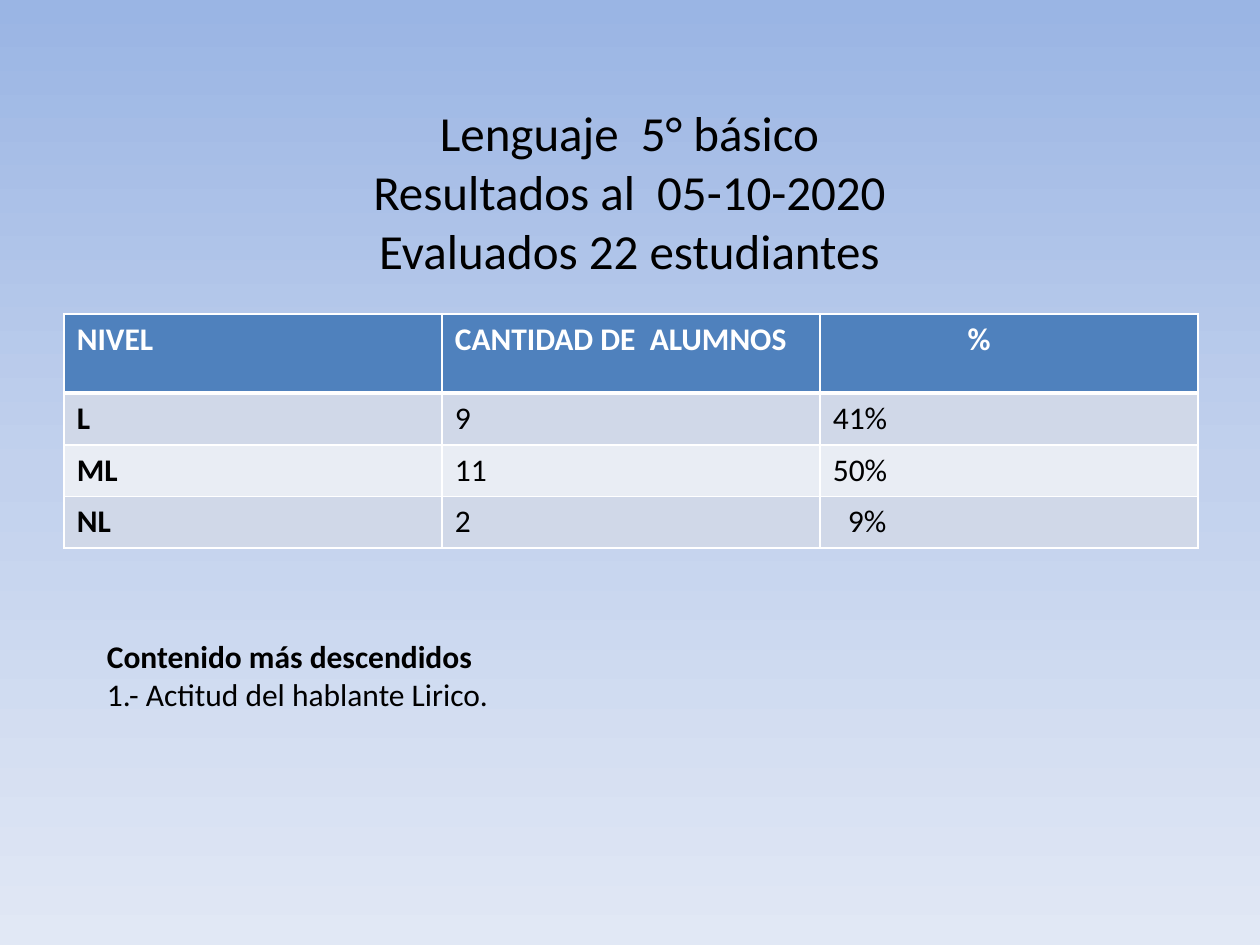
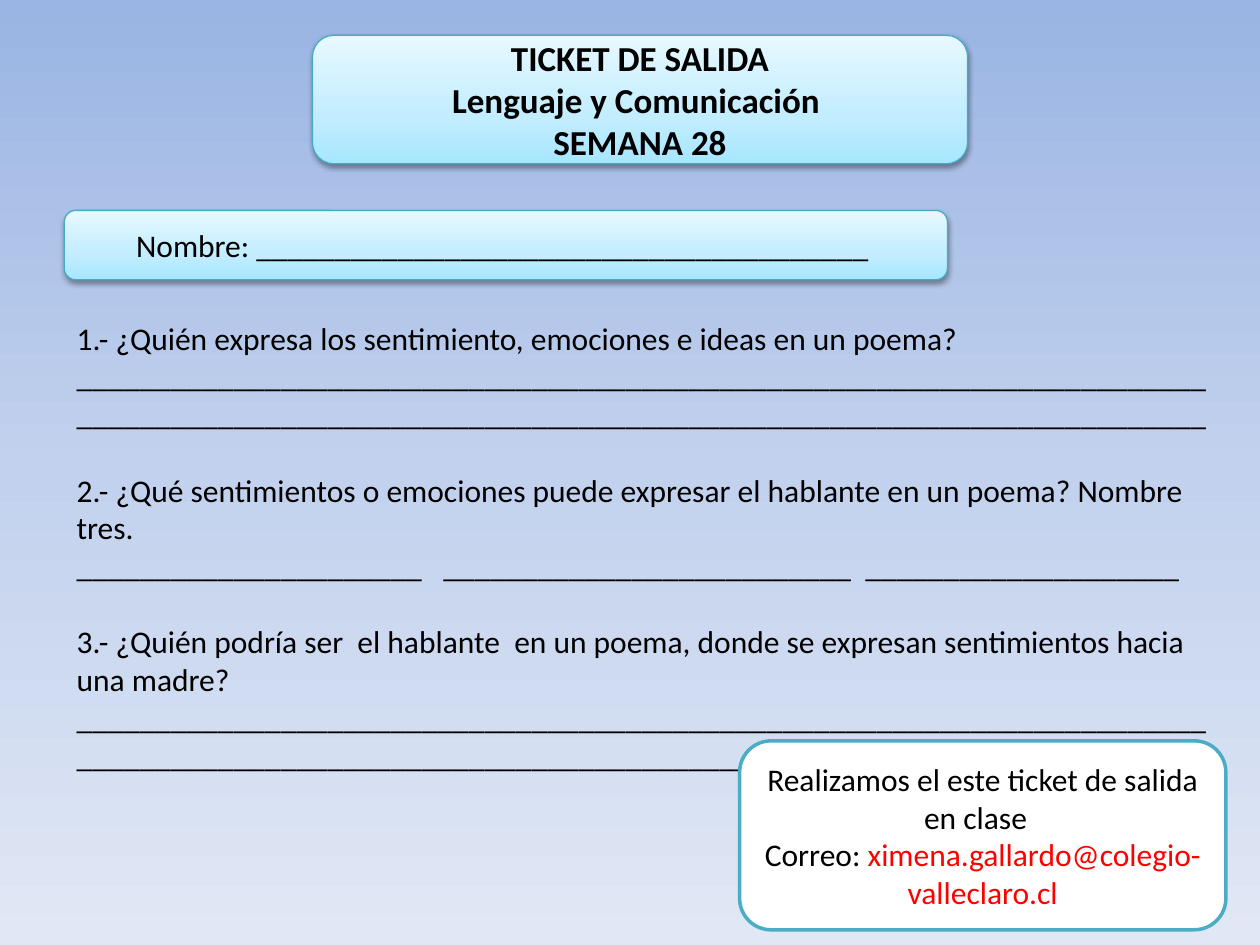
from dataclasses import dataclass

from lxml.etree import SubElement
from pptx import Presentation
from pptx.dml.color import RGBColor
from pptx.enum.shapes import MSO_SHAPE as Shape
from pptx.enum.text import MSO_ANCHOR as Anchor, MSO_AUTO_SIZE as AutoSize, PP_ALIGN as Align
from pptx.oxml.ns import qn
from pptx.util import Emu, Inches, Pt

# Content: a line is a text or a list of (text, format) pieces
RESULTS_TITLE = ["Lenguaje  5° básico", "Resultados al  05-10-2020", "Evaluados 22 estudiantes"]
RESULTS = [
    ["NIVEL", "CANTIDAD DE  ALUMNOS", "%"],
    ["L", "9", "41%"],
    ["ML", "11", "50%"],
    ["NL", "2", "9%"],
]
RESULT_INDENTS = {(0, 2): 1.07, (3, 2): 0.12}
WEAK_CONTENT = [
    [("Contenido más descendidos", {"bold": True})],
    "1.- Actitud del hablante Lirico.",
]
TICKET_TITLE = ["TICKET DE SALIDA", "Lenguaje y Comunicación ", "SEMANA 28"]
STUDENT_NAME = ["Nombre: " + "_" * 39 + " "]
QUESTIONS = [
    ("1.- ¿Quién expresa los sentimiento, emociones e ideas en un poema?", "_" * 144),
    ("2.- ¿Qué sentimientos o emociones puede expresar el hablante en un poema? Nombre tres.",
     "\t".join("_" * count for count in (22, 26, 20))),
    ("3.- ¿Quién podría ser  el hablante  en un poema, donde se expresan sentimientos hacia "
     "una madre?", "_" * 115),
]
ANSWER_TABS = [2.91, 6.26]


@dataclass(frozen=True)
class Theme:
    font: str = "Calibri"
    ink: str = "000000"
    white: str = "FFFFFF"
    header: str = "4F81BD"
    bands: tuple = ("D0D8E8", "E9EDF4")
    alert: str = "FF0000"
    card_line: str = "46AAC5"
    note_line: str = "4BACC6"
    backdrop: tuple = ((0, "9AB5E4"), (50, "C2D1ED"), (100, "E1E8F5"))
    card: tuple = ((0, "A7E6FF"), (35, "C1EDFF"), (100, "E7F8FF"))
    title: int = 28
    heading: int = 20
    body: int = 18
    gap: int = 22


THEME = Theme()
CONTACT = [
    "Realizamos el este ticket de salida en clase  ",
    ["Correo: ", ("ximena.gallardo@colegio-valleclaro.cl", {"color": THEME.alert})],
]

# Layout in inches
WIDTH, HEIGHT = 10, 7.5
MARGIN = 0.51
COLUMN = 3
HEADER_ROW, BODY_ROW = 0.63, 0.41


def rgb(code):
    return RGBColor.from_string(code)


def box(*lengths):
    return [Inches(length) for length in lengths]


def add_color(parent, code):
    return SubElement(parent, qn("a:srgbClr"), val=code)


def paint_gradient(fill, owner, stops, angle):
    fill.gradient()
    fill.gradient_angle = angle
    stop_list = owner.find(".//" + qn("a:gsLst"))
    stop_list.clear()
    for share, code in stops:
        add_color(SubElement(stop_list, qn("a:gs"), pos=str(share * 1000)), code)


def write(frame, lines, size=THEME.body, align=Align.LEFT, anchor=Anchor.TOP, **base):
    frame.word_wrap = True
    frame.vertical_anchor = anchor
    for number, line in enumerate(lines):
        paragraph = frame.paragraphs[0] if number == 0 else frame.add_paragraph()
        paragraph.alignment = align
        for piece in [line] if isinstance(line, str) else line:
            words, extra = (piece, {}) if isinstance(piece, str) else piece
            look = {"name": THEME.font, "size": Pt(size), "bold": False,
                    "color": THEME.ink, **base, **extra}
            run = paragraph.add_run()
            run.text = words
            run.font.color.rgb = rgb(look.pop("color"))
            for attribute, value in look.items():
                setattr(run.font, attribute, value)


def add_text(slide, place, lines, **look):
    frame = slide.shapes.add_textbox(*box(*place)).text_frame
    write(frame, lines, **look)
    return frame


def add_panel(slide, place, lines, line_color, line_width, **look):
    panel = slide.shapes.add_shape(Shape.ROUNDED_RECTANGLE, *box(*place))
    panel.shadow.inherit = False
    panel.line.color.rgb = rgb(line_color)
    panel.line.width = Pt(line_width)
    write(panel.text_frame, lines, align=Align.CENTER, anchor=Anchor.MIDDLE, **look)
    return panel


def add_card(slide, place, lines, **look):
    card = add_panel(slide, place, lines, THEME.card_line, 0.75, **look)
    paint_gradient(card.fill, card._element.spPr, THEME.card, 90)
    effects = card._element.spPr.find(qn("a:effectLst"))
    shadow = SubElement(effects, qn("a:outerShdw"), blurRad=str(Pt(3.1)), dist=str(Pt(1.6)),
                        dir="5400000", rotWithShape="0")
    SubElement(add_color(shadow, THEME.ink), qn("a:alpha"), val="38000")


def border_cell(cell, bold_sides):
    properties = cell._tc.get_or_add_tcPr()
    for side in "LRTB":
        width = Pt(3 if side in bold_sides else 1)
        edge = SubElement(properties, qn("a:ln" + side), w=str(width))
        add_color(SubElement(edge, qn("a:solidFill")), THEME.white)


def add_results(slide, top):
    rows, columns = len(RESULTS), len(RESULTS[0])
    height = HEADER_ROW + BODY_ROW * (rows - 1)
    table = slide.shapes.add_table(
        rows, columns, *box(MARGIN, top, COLUMN * columns, height)).table
    for row, levels in enumerate(RESULTS):
        is_header = row == 0
        table.rows[row].height = Inches(HEADER_ROW if is_header else BODY_ROW)
        for column, words in enumerate(levels):
            cell = table.cell(row, column)
            border_cell(cell, {0: "B", 1: "T"}.get(row, ""))
            cell.fill.solid()
            cell.fill.fore_color.rgb = rgb(
                THEME.header if is_header else THEME.bands[(row - 1) % 2])
            write(cell.text_frame, [words], bold=is_header or column == 0,
                  color=THEME.white if is_header else THEME.ink)
            indent = RESULT_INDENTS.get((row, column), 0)
            cell.text_frame.paragraphs[0]._p.get_or_add_pPr().set("marL", str(Inches(indent)))


def add_questions(slide, place):
    frame = add_text(slide, place, [line for pair in QUESTIONS for line in pair])
    frame.auto_size = AutoSize.SHAPE_TO_FIT_TEXT
    for question in frame.paragraphs[2::2]:
        question.space_before = Pt(THEME.gap)
    for answer in frame.paragraphs[1::2]:
        tabs = SubElement(answer._p.get_or_add_pPr(), qn("a:tabLst"))
        for stop in ANSWER_TABS:
            SubElement(tabs, qn("a:tab"), pos=str(Inches(stop)), algn="l")


def new_slide(deck):
    slide = deck.slides.add_slide(deck.slide_layouts[6])
    paint_gradient(slide.background.fill, slide._element, THEME.backdrop, 270)
    return slide


def main():
    deck = Presentation()
    deck.slide_width, deck.slide_height = box(WIDTH, HEIGHT)

    # Results by level
    results = new_slide(deck)
    add_text(results, (0.5, 0.3, 8.99, 2.43), RESULTS_TITLE, size=THEME.title,
             align=Align.CENTER, anchor=Anchor.MIDDLE)
    add_results(results, 2.49)
    add_text(results, (0.75, 5.01, 3.39, 0.71), WEAK_CONTENT)

    # Exit ticket
    ticket = new_slide(deck)
    add_card(ticket, (2.48, 0.28, 5.2, 1.02), TICKET_TITLE, size=THEME.heading, bold=True)
    add_card(ticket, (MARGIN, 1.67, 7.01, 0.55), STUDENT_NAME)
    add_questions(ticket, (MARGIN, 2.48, 9.21, 3.74))
    contact = add_panel(ticket, (5.87, 5.88, 3.86, 1.5), CONTACT, THEME.note_line, 2)
    contact.fill.solid()
    contact.fill.fore_color.rgb = rgb(THEME.white)

    deck.save("out.pptx")


if __name__ == "__main__":
    main()
